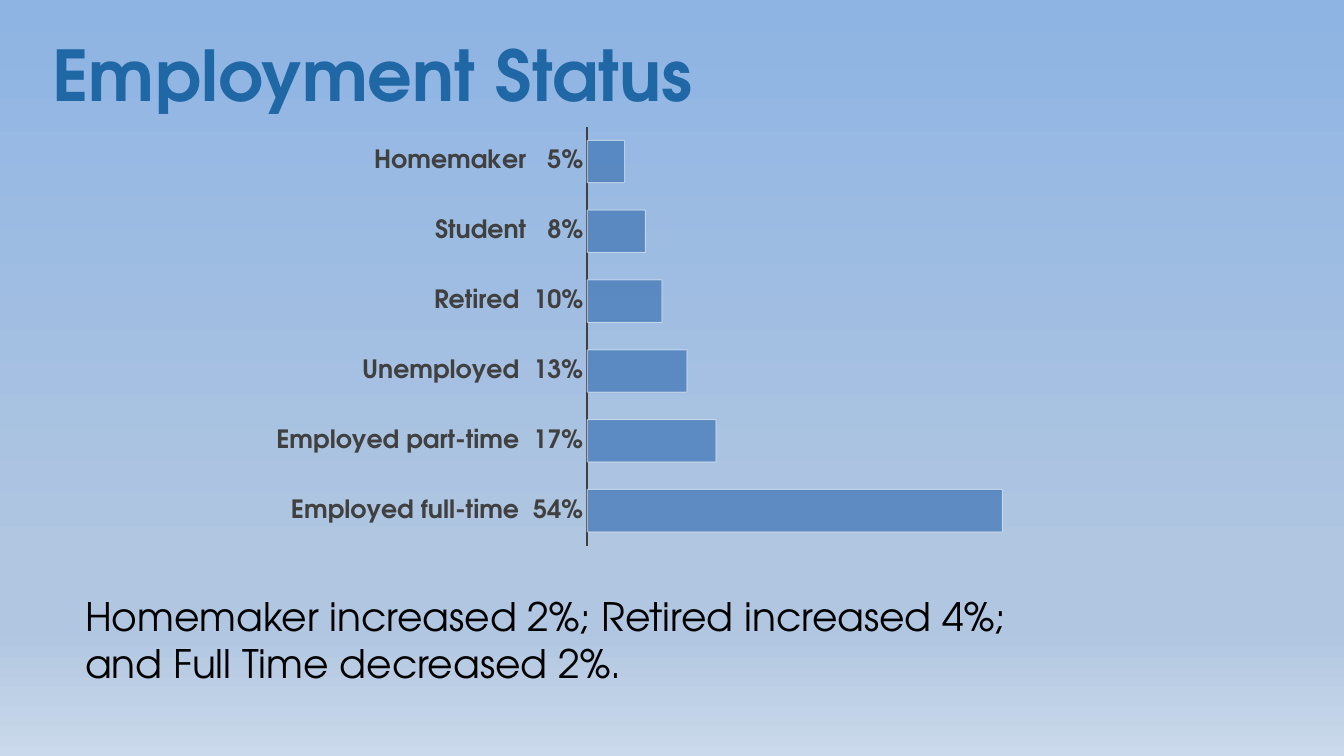
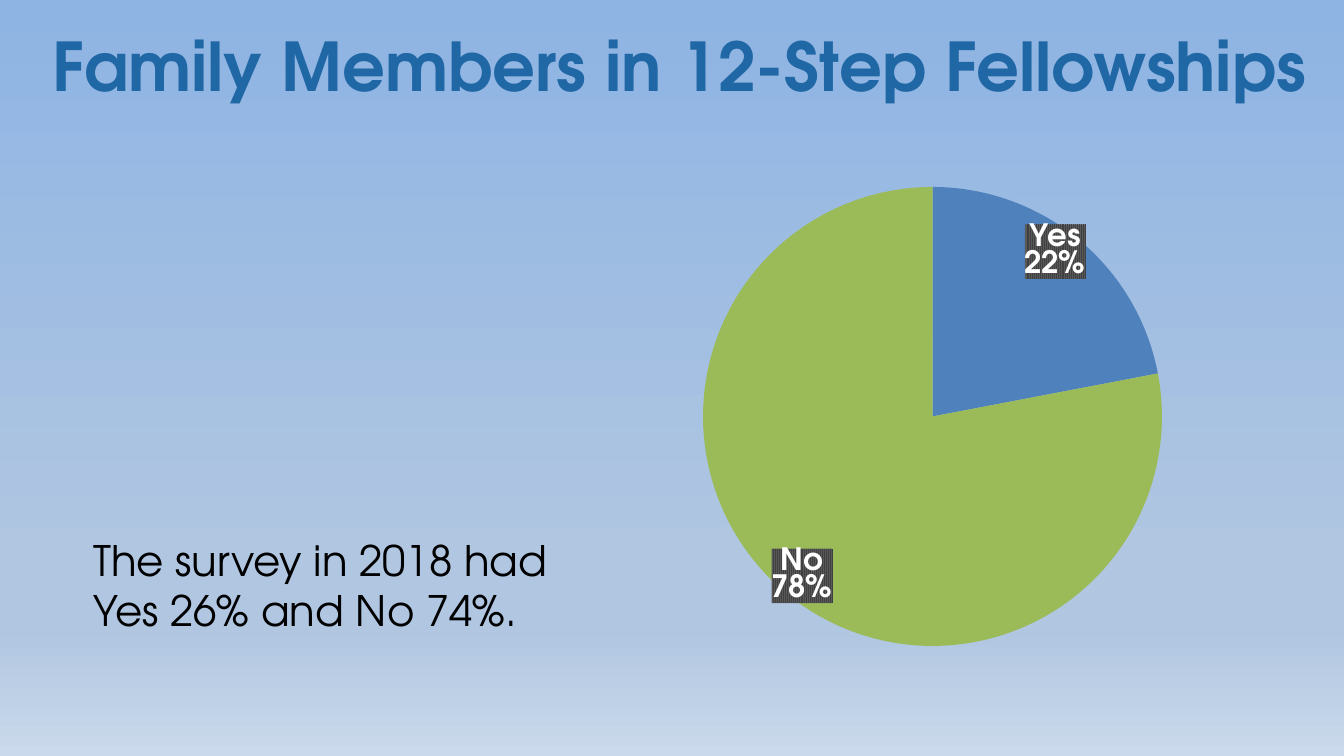
from copy import deepcopy

from lxml import etree
from pptx import Presentation
from pptx import util as u
from pptx.chart.data import CategoryChartData
from pptx.dml.color import RGBColor
from pptx.enum import chart as ch
from pptx.enum import text
from pptx.oxml import parse_xml
from pptx.oxml.ns import nsdecls, qn

FONT = "TeX Gyre Adventor"
INK = {
    "sky": "8EB4E3",
    "mist": "B0C6E1",
    "haze": "CAD9EB",
    "title": "2067A5",
    "note": "000000",
    "axis": "404040",
    "stripe": "595959",
    "blue": "4F81BD",
    "green": "9BBB59",
    "white": "FFFFFF",
}
STOPS = [(0, "sky"), (74, "mist"), (83, "mist"), (100, "haze")]
JOBS = [
    ("Employed full-time", 54, 100),
    ("Employed part-time", 17, 31),
    ("Unemployed", 13, 24),
    ("Retired", 10, 18),
    ("Student", 8, 14),
    ("Homemaker", 5, 9),
]
KIN = [("Yes", 22, "blue", (0.06, -0.14)), ("No", 78, "green", (-0.07, 0.13))]


def tint(name):
    return RGBColor.from_string(INK[name])


def style(font, size, color, bold=False):
    font.name = FONT
    font.size = u.Pt(size)
    font.bold = bold
    font.color.rgb = tint(color)


def place(shape, box):
    shape.left, shape.top, shape.width, shape.height = map(u.Cm, box)


def backdrop(master):
    master.background.fill.gradient()
    stops = master.element.find(".//" + qn("p:bgPr")).find(".//" + qn("a:gsLst"))
    lin = stops.getnext()
    for stop in list(stops):
        stops.remove(stop)
    for pos, name in STOPS:
        stop = etree.SubElement(stops, qn("a:gs"), pos=str(pos * 1000))
        etree.SubElement(stop, qn("a:srgbClr"), val=INK[name])
    lin.set("ang", "5400000")
    lin.set("scaled", "0")


def title(slide, words, box, size, anchor):
    shape = slide.shapes.title
    place(shape, box)
    frame = shape.text_frame
    frame.text = words
    frame.word_wrap = True
    frame.auto_size = text.MSO_AUTO_SIZE.NONE
    frame.vertical_anchor = anchor
    para = frame.paragraphs[0]
    para.alignment = text.PP_ALIGN.LEFT
    style(para.font, size, "title", True)
    return frame


def note(slide, words, box, size):
    frame = slide.shapes.add_textbox(*map(u.Cm, box)).text_frame
    frame.word_wrap = True
    frame.text = words
    style(frame.paragraphs[0].font, size, "note")


def layout(parts, modes=""):
    sizes = "".join(f'<c:{key} val="{val}"/>' for key, val in parts)
    return parse_xml(
        f'<c:layout {nsdecls("c")}><c:manualLayout>{modes}{sizes}'
        "</c:manualLayout></c:layout>"
    )


def graph(slide, kind, names, vals, box, area):
    data = CategoryChartData()
    data.categories = names
    data.add_series("Series 1", vals)
    chart = slide.shapes.add_chart(kind, *map(u.Cm, box), data).chart
    chart.has_legend = False
    chart.has_title = False
    style(chart.font, 10, "note")
    chart.font.name = "Calibri"
    plot = chart._chartSpace.find(".//" + qn("c:plotArea"))
    old = plot.find(qn("c:layout"))
    if old is not None:
        plot.remove(old)
    modes = (
        '<c:layoutTarget val="inner"/>'
        '<c:xMode val="edge"/><c:yMode val="edge"/>'
    )
    plot.insert(0, layout(zip("xywh", area), modes))
    return chart


def fade(owner, share):
    for color in owner.iter(qn("a:srgbClr")):
        etree.SubElement(color, qn("a:alpha"), val=str(share * 1000))


def bars(slide, box):
    names = [f"{name}  {share:2}%" for name, share, _ in JOBS]
    vals = [val for _, _, val in JOBS]
    kind = ch.XL_CHART_TYPE.BAR_CLUSTERED
    chart = graph(slide, kind, names, vals, box, (0.41, 0.02, 0.52, 0.96))
    cats, scale = chart.category_axis, chart.value_axis
    for axis in (cats, scale):
        axis.has_major_gridlines = False
        axis.major_tick_mark = ch.XL_TICK_MARK.NONE
    style(cats.tick_labels.font, 18, "axis", True)
    cats.format.line.color.rgb = tint("axis")
    cats.format.line.width = u.Pt(1.5)
    scale.minimum_scale, scale.maximum_scale = 0, 100
    scale.visible = False
    plot = chart.plots[0]
    plot.gap_width = 65
    plot.vary_by_categories = False
    look = plot.series[0].format
    look.fill.solid()
    look.fill.fore_color.rgb = tint("blue")
    look.line.color.rgb = tint("white")
    look.line.width = u.Pt(0.75)
    shell = plot.series[0]._element.find(qn("c:spPr"))
    fade(shell.find(qn("a:solidFill")), 85)
    fade(shell.find(qn("a:ln")), 50)


def tags(series):
    labels = series.data_labels
    labels.show_value = False
    labels.show_category_name = True
    labels.show_percentage = True
    labels.number_format = "0%"
    labels.number_format_is_linked = False
    labels.position = ch.XL_LABEL_POSITION.CENTER
    style(labels.font, 22, "white", True)
    root = labels._element
    root.find(qn("c:numFmt")).addnext(parse_xml(
        f'<c:spPr {nsdecls("c", "a")}><a:pattFill prst="narVert">'
        f'<a:fgClr><a:srgbClr val="{INK["axis"]}"/></a:fgClr>'
        f'<a:bgClr><a:srgbClr val="{INK["stripe"]}"/></a:bgClr>'
        "</a:pattFill></c:spPr>"
    ))
    gap = etree.Element(qn("c:separator"))
    gap.text = "\n"
    root.find(qn("c:showBubbleSize")).addnext(gap)
    parts = [part for part in root if part.tag != qn("c:showLeaderLines")]
    for idx, (_, _, _, shift) in enumerate(KIN):
        tag = etree.Element(qn("c:dLbl"))
        etree.SubElement(tag, qn("c:idx"), val=str(idx))
        tag.append(layout(zip("xy", shift)))
        tag.extend(deepcopy(parts))
        root.insert(idx, tag)


def pie(slide, box):
    names = [row[0] for row in KIN]
    vals = [row[1] for row in KIN]
    kind = ch.XL_CHART_TYPE.PIE
    chart = graph(slide, kind, names, vals, box, (0.22, 0.08, 0.56, 0.84))
    plot = chart.plots[0]
    plot.vary_by_categories = True
    series = plot.series[0]
    for idx, row in enumerate(KIN):
        fill = series.points[idx].format.fill
        fill.solid()
        fill.fore_color.rgb = tint(row[2])
    tags(series)


def jobs(slide):
    frame = title(slide, "Employment Status", (1.07, 0.64, 21.16, 3.18), 50,
                  text.MSO_ANCHOR.TOP)
    frame.margin_top = 0
    frame.paragraphs[0].line_spacing = 1.07
    bars(slide, (6.55, 2.97, 20.12, 11))
    note(slide, "Homemaker increased 2%; Retired increased 4%;\v"
         "and Full Time decreased 2%.", (1.9, 14.81, 30.48, 2.64), 28)


def kin(slide):
    title(slide, "Family Members in 12-Step Fellowships",
          (1.07, 0.03, 32.59, 3.18), 48, text.MSO_ANCHOR.MIDDLE)
    pie(slide, (13.13, 3.61, 20.74, 13.77))
    note(slide, "The survey in 2018 had\vYes 26% and No 74%.",
         (2.1, 13.34, 12.5, 2.82), 30)


def main():
    deck = Presentation()
    deck.slide_width, deck.slide_height = u.Cm(33.87), u.Cm(19.05)
    backdrop(deck.slide_master)
    for build in (jobs, kin):
        build(deck.slides.add_slide(deck.slide_layouts[5]))
    deck.save("out.pptx")


if __name__ == "__main__":
    main()
